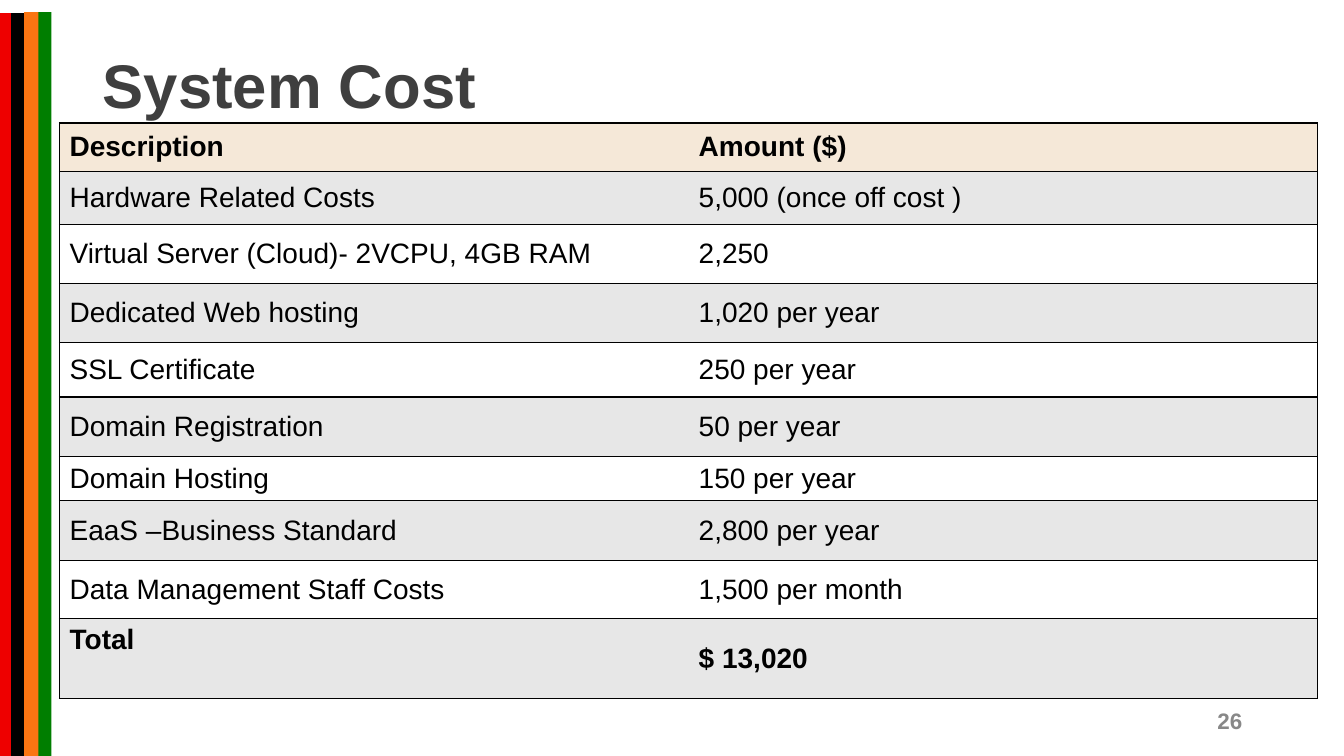
import pptx
import pptx.util
import pptx.dml.color
import pptx.enum.shapes
import pptx.enum.text
import pptx.oxml
import pptx.oxml.ns

Inches, Pt = pptx.util.Inches, pptx.util.Pt
RGBColor = pptx.dml.color.RGBColor
MIDDLE = pptx.enum.text.MSO_ANCHOR.MIDDLE
TOP = pptx.enum.text.MSO_ANCHOR.TOP

TITLE = "System Cost"
PAGE = "26"
COSTS = [
    ("Description", "Amount ($)", 0.48),
    ("Hardware Related Costs", "5,000 (once off cost )", 0.53),
    ("Virtual Server (Cloud)- 2VCPU, 4GB RAM", "2,250", 0.58),
    ("Dedicated Web hosting", "1,020 per year", 0.59),
    ("SSL Certificate", "250 per year", 0.54),
    ("Domain Registration", "50 per year", 0.59),
    ("Domain Hosting", "150 per year", 0.44),
    ("EaaS –Business Standard", "2,800 per year", 0.59),
    ("Data Management Staff Costs", "1,500 per month", 0.58),
    ("Total", "$ 13,020", 0.79),
]

GREEN = RGBColor(0x00, 0x7E, 0x00)
RED = RGBColor(0xEE, 0x00, 0x00)
BLACK = RGBColor(0x00, 0x00, 0x00)
ORANGE = RGBColor(0xFA, 0x75, 0x12)
TITLE_GREY = RGBColor(0x3F, 0x3F, 0x3F)
PAGE_GREY = RGBColor(0x88, 0x88, 0x88)
CREAM = RGBColor(0xF5, 0xE8, 0xD8)
BAND = RGBColor(0xE7, 0xE7, 0xE7)
WHITE = RGBColor(0xFF, 0xFF, 0xFF)

WIDTH, HEIGHT = 13.33, 7.5
STRIPES = [
    (0.35, 0.12, 0.16, GREEN),
    (0, 0.13, 0.24, RED),
    (0.11, 0.13, 0.14, BLACK),
    (0.24, 0.12, 0.14, ORANGE),
]
TABLE_LEFT, TABLE_TOP, COLUMN = 0.59, 1.22, 6.24


def style(p, size, color, bold):
    p.font.name = "Arial"
    p.font.size = Pt(size)
    p.font.bold = bold
    p.font.color.rgb = color


def add_borders(cell, open_side):
    tcPr = cell._tc.get_or_add_tcPr()
    for side in "LRTB":
        paint = "<a:noFill/>"
        if side != open_side:
            paint = f'<a:solidFill><a:srgbClr val="{BLACK}"/></a:solidFill>'
        tcPr.append(pptx.oxml.parse_xml(
            f'<a:ln{side} {pptx.oxml.ns.nsdecls("a")} w="{Pt(1)}">'
            f'{paint}</a:ln{side}>'))


def add_stripes(slide):
    for left, top, width, color in STRIPES:
        sp = slide.shapes.add_shape(
            pptx.enum.shapes.MSO_SHAPE.RECTANGLE, Inches(left), Inches(top),
            Inches(width), Inches(HEIGHT - top))
        sp.shadow.inherit = False
        sp.fill.solid()
        sp.fill.fore_color.rgb = color
        sp.line.fill.background()


def add_title(slide):
    sp = slide.shapes.title
    sp.left, sp.top = Inches(0.92), Inches(0.4)
    sp.width, sp.height = Inches(11.5), Inches(0.95)
    tf = sp.text_frame
    tf.text = TITLE
    tf.vertical_anchor = MIDDLE
    p = tf.paragraphs[0]
    p.alignment = pptx.enum.text.PP_ALIGN.LEFT
    p.line_spacing = 0.9
    style(p, 44, TITLE_GREY, True)


def add_page_number(slide):
    sp = slide.shapes.add_textbox(
        Inches(9.42), Inches(6.95), Inches(3), Inches(0.4))
    tf = sp.text_frame
    tf.word_wrap = True
    tf.text = PAGE
    tf.vertical_anchor = MIDDLE
    p = tf.paragraphs[0]
    p.alignment = pptx.enum.text.PP_ALIGN.RIGHT
    style(p, 16, PAGE_GREY, True)


def add_cost_table(slide):
    last = len(COSTS) - 1
    total_height = sum(height for _, _, height in COSTS)
    table = slide.shapes.add_table(
        len(COSTS), 2, Inches(TABLE_LEFT), Inches(TABLE_TOP),
        Inches(2 * COLUMN), Inches(total_height)).table
    table.first_row = table.horz_banding = False
    for i, (description, amount, height) in enumerate(COSTS):
        table.rows[i].height = Inches(height)
        fill = CREAM if i == 0 else BAND if i % 2 else WHITE
        for j, text in enumerate((description, amount)):
            cell = table.cell(i, j)
            cell.text = text
            cell.vertical_anchor = TOP if (i, j) == (last, 0) else MIDDLE
            add_borders(cell, "RL"[j])
            cell.fill.solid()
            cell.fill.fore_color.rgb = fill
            style(cell.text_frame.paragraphs[0], 20, BLACK, i in (0, last))


def main():
    prs = pptx.Presentation()
    prs.slide_width, prs.slide_height = Inches(WIDTH), Inches(HEIGHT)
    slide = prs.slides.add_slide(prs.slide_layouts[5])
    add_stripes(slide)
    add_title(slide)
    add_page_number(slide)
    add_cost_table(slide)
    prs.save("out.pptx")


if __name__ == "__main__":
    main()
